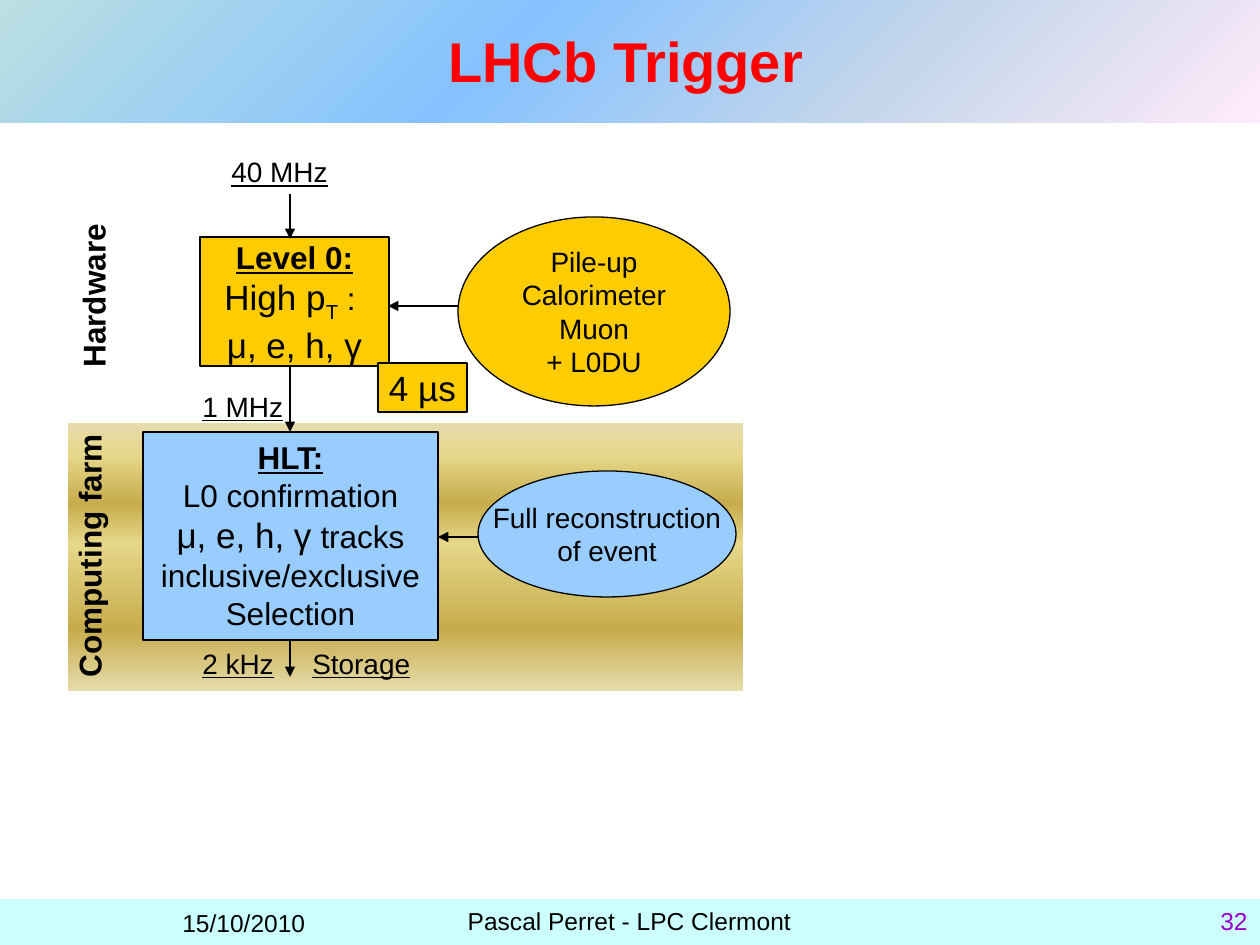
from lxml import etree
from pptx import Presentation
from pptx import util as u
from pptx.dml.color import RGBColor
from pptx.enum import shapes, text
from pptx.oxml.ns import qn

EMU_PER_PX = 914400 / 126
COLORS = {"black": "000000", "red": "FF0000", "purple": "9900CC",
          "hardware": "FFCC00", "software": "99CCFF", "footer": "CCFFFF"}
BANNER = [(0, "BBE0E3"), (40, "85C2FF"), (70, "C4D6EB"), (100, "FFEBFA")]
GOLD = [(0, "E6DCAC"), (12, "E6D78A"), (30, "C7AC4C"),
        (45, "E6D78A"), (77, "C7AC4C"), (100, "E6DCAC")]

RECT, OVAL = shapes.MSO_SHAPE.RECTANGLE, shapes.MSO_SHAPE.OVAL
LEFT, CENTER, RIGHT = text.PP_ALIGN.LEFT, text.PP_ALIGN.CENTER, text.PP_ALIGN.RIGHT
TOP, MIDDLE = text.MSO_ANCHOR.TOP, text.MSO_ANCHOR.MIDDLE

HEADING = {"bold": True, "underline": True}
RATE = {"size": 16, "underline": True}
SIDE = {"size": 18, "bold": True, "wrap": False, "vertical": True}
NODE = {"align": CENTER, "anchor": MIDDLE, "wrap": False}

# A paragraph is a string or a list of (text, run format) pairs.
LEVEL_0 = [[("Level 0:", HEADING)],
           [("High p", {"size": 20}), ("T", {"size": 20, "baseline": -25000}), (" : ", {})],
           [("μ, e, h, γ", {"size": 20})]]
HLT = [[("HLT:", HEADING)],
       "L0 confirmation",
       [("μ, e, h, γ", {"size": 20}), (" tracks", {})],
       "inclusive/exclusive",
       "Selection"]

# kind, box (left, top, width, height), fill, paragraphs, format
NODES = [
    (OVAL, (458, 217, 272, 189), "hardware",
     ["Pile-up", "Calorimeter", "Muon", "+ L0DU"], {**NODE, "size": 16}),
    (RECT, (200, 237, 189, 129), "hardware", LEVEL_0, {**NODE, "size": 18}),
    (RECT, (378, 363, 89, 49), "hardware", ["4 µs"], {**NODE, "size": 20}),
    (RECT, (143, 432, 295, 208), "software", HLT, {"size": 18, "align": CENTER}),
    (OVAL, (478, 471, 258, 126), "software",
     ["Full reconstruction", "of event"], {**NODE, "size": 16}),
]
LABELS = [
    ("40 MHz", (219, 155, 159, 49), {**RATE, "spacing": 0.8}),
    ("1 MHz", (190, 383, 120, 47), RATE),
    ("2 kHz", (190, 640, 120, 47), RATE),
    ("Storage", (300, 640, 125, 47), RATE),
    ("Hardware", (68, 214, 63, 166), SIDE),
    ("Computing farm", (64, 423, 63, 267), SIDE),
    ("15/10/2010", (170, 907, 378, 32), {"size": 14, "anchor": MIDDLE}),
    ("Pascal Perret - LPC Clermont", (312, 900, 635, 55), {"size": 14, "align": CENTER}),
    ("32", (966, 900, 294, 45), {"size": 14, "align": RIGHT, "color": "purple"}),
]
FLOW_X = 290
ARROWS = [((FLOW_X, 194), (FLOW_X, 239)), ((FLOW_X, 366), (FLOW_X, 432)),
          ((FLOW_X, 640), (FLOW_X, 677)), ((458, 306), (388, 306)),
          ((479, 537), (438, 537))]


def px(*lengths):
    return [u.Emu(round(n * EMU_PER_PX)) for n in lengths]


def rgb(name):
    return RGBColor.from_string(COLORS[name])


def write(shape, paragraphs, size=18, color="black", bold=False, align=LEFT,
          anchor=TOP, wrap=True, vertical=False, spacing=None, underline=False):
    frame = shape.text_frame
    frame.word_wrap, frame.vertical_anchor = wrap, anchor
    if vertical:
        frame._txBody.bodyPr.set("vert", "vert270")
    base = {"size": size, "bold": bold, "underline": underline}
    for i, content in enumerate(paragraphs):
        paragraph = frame.add_paragraph() if i else frame.paragraphs[0]
        paragraph.alignment = align
        if spacing:
            paragraph.line_spacing = spacing
        for words, changes in [(content, {})] if isinstance(content, str) else content:
            style = {**base, **changes}
            run = paragraph.add_run()
            run.text = words
            run.font.name, run.font.size = "Arial", u.Pt(style["size"])
            run.font.bold, run.font.underline = style["bold"], style["underline"]
            run.font.color.rgb = rgb(color)
            if "baseline" in style:
                run.font._element.set("baseline", str(style["baseline"]))


def add_block(slide, kind, box, fill=None, outlined=False):
    block = slide.shapes.add_shape(kind, *px(*box))
    block.shadow.inherit = False
    if fill:
        block.fill.solid()
        block.fill.fore_color.rgb = rgb(fill)
    if outlined:
        block.line.color.rgb = rgb("black")
        block.line.width = u.Pt(0.75)
    else:
        block.line.fill.background()
    return block


def set_gradient(block, stops, angle):
    """Fill with any number of (percent, hex) stops, angle clockwise."""
    block.fill.gradient()
    gradient = block.element.spPr.find(qn("a:gradFill"))
    stop_list = gradient.find(qn("a:gsLst"))
    for stop in list(stop_list):
        stop_list.remove(stop)
    for percent, color in stops:
        stop = etree.SubElement(stop_list, qn("a:gs"), pos=str(percent * 1000))
        etree.SubElement(stop, qn("a:srgbClr"), val=color)
    direction = gradient.find(qn("a:lin"))
    direction.set("ang", str(angle * 60000))
    direction.set("scaled", "0")


def add_arrow(slide, start, end):
    arrow = slide.shapes.add_connector(shapes.MSO_CONNECTOR.STRAIGHT, *px(*start, *end))
    arrow.line.color.rgb = rgb("black")
    arrow.line.width = u.Pt(0.75)
    etree.SubElement(arrow.line._get_or_add_ln(), qn("a:tailEnd"), type="triangle")
    etree.SubElement(arrow.element.spPr, qn("a:effectLst"))


def main():
    deck = Presentation()
    deck.slide_width, deck.slide_height = px(1260, 945)
    slide = deck.slides.add_slide(deck.slide_layouts[5])

    add_block(slide, RECT, (0, 899, 1260, 46), "footer")
    set_gradient(add_block(slide, RECT, (0, 0, 1260, 123)), BANNER, 45)

    title = slide.shapes.title
    title.left, title.top, title.width, title.height = px(59, 20, 1134, 81)
    write(title, ["LHCb Trigger"], size=32, color="red", bold=True,
          align=CENTER, anchor=MIDDLE)
    slide.shapes._spTree.append(title.element)  # in front of the banner

    set_gradient(add_block(slide, RECT, (68, 423, 675, 268)), GOLD, 90)
    for kind, box, fill, paragraphs, style in NODES:
        write(add_block(slide, kind, box, fill, outlined=True), paragraphs, **style)
    for words, box, style in LABELS:
        write(slide.shapes.add_textbox(*px(*box)), [words], **style)
    for start, end in ARROWS:
        add_arrow(slide, start, end)

    deck.save("out.pptx")


if __name__ == "__main__":
    main()
